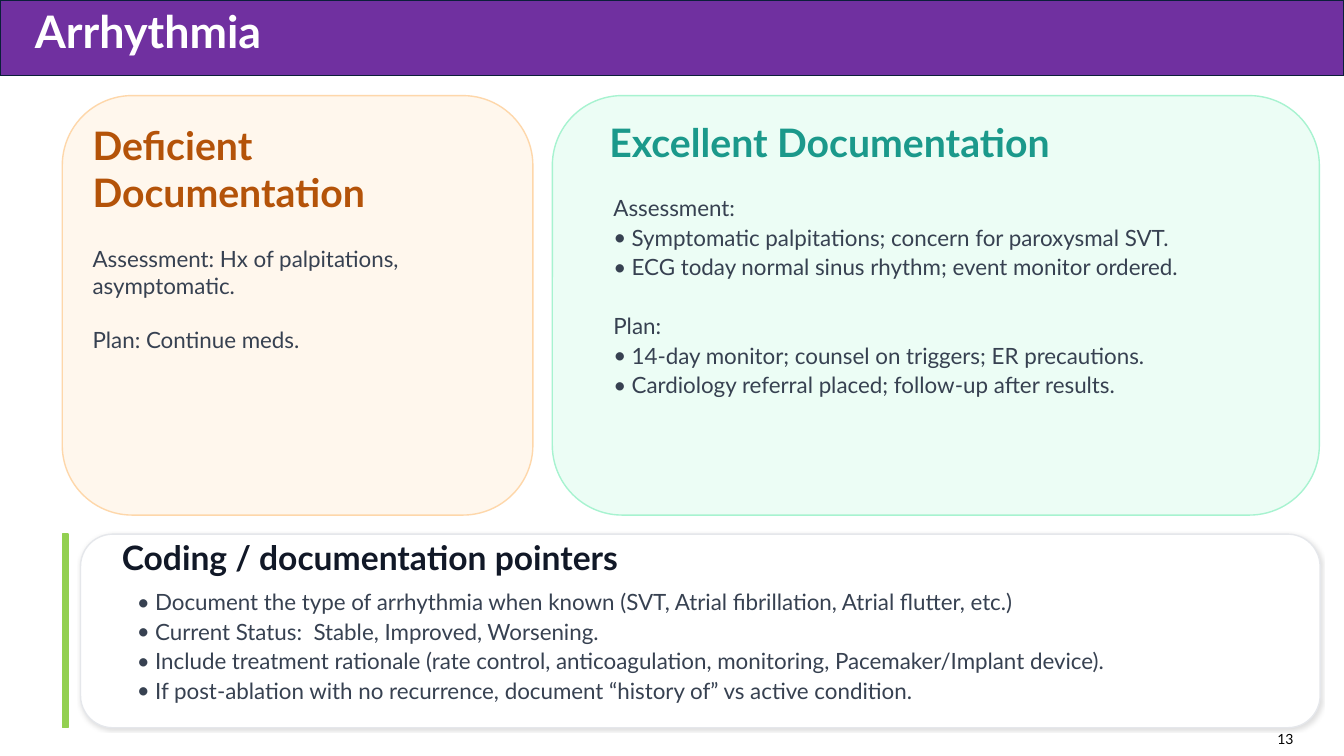
from dataclasses import dataclass

from lxml import etree
from pptx import Presentation
from pptx.dml.color import RGBColor
from pptx.enum.shapes import MSO_SHAPE
from pptx.enum.text import MSO_ANCHOR, PP_ALIGN
from pptx.oxml.ns import qn
from pptx.util import Cm, Pt

RECT, ROUNDED = MSO_SHAPE.RECTANGLE, MSO_SHAPE.ROUNDED_RECTANGLE
TOP, MIDDLE = MSO_ANCHOR.TOP, MSO_ANCHOR.MIDDLE
LEFT, RIGHT = PP_ALIGN.LEFT, PP_ALIGN.RIGHT


@dataclass(frozen=True)
class Style:
    size: float
    color: str
    bold: bool = False


@dataclass(frozen=True)
class Theme:
    font: str = "Lato"
    title: Style = Style(32, "FFFFFF", True)
    deficient: Style = Style(28, "B45309", True)
    excellent: Style = Style(28, "1B998B", True)
    pointers: Style = Style(24, "111827", True)
    body: Style = Style(16, "374151")
    number: Style = Style(10, "000000")
    # Each pair is fill, outline
    banner: tuple = ("7030A0", "0B1F3A")
    deficient_card: tuple = ("FFF7ED", "FED7AA")
    excellent_card: tuple = ("ECFDF5", "A7F3D0")
    pointers_card: tuple = ("FFFFFF", "E5E7EB")
    accent: tuple = ("92D050", "92D050")


@dataclass(frozen=True)
class Box:
    """A rectangle in centimetres."""
    left: float
    top: float
    width: float
    height: float

    def inner(self, left, top, width, height):
        return Box(self.left + left, self.top + top, width, height)

    def lengths(self):
        return [Cm(side) for side in (self.left, self.top, self.width, self.height)]


@dataclass(frozen=True)
class Line:
    text: str
    style: Style
    bullet: bool = False
    gap: float = 0  # points before the paragraph


THEME = Theme()


def add_panel(page, kind, box, colors):
    panel = page.shapes.add_shape(kind, *box.lengths())
    panel.shadow.inherit = False
    fill, outline = colors
    panel.fill.solid()
    panel.fill.fore_color.rgb = RGBColor.from_string(fill)
    panel.line.color.rgb = RGBColor.from_string(outline)
    panel.line.width = Pt(1)
    return panel


def add_soft_shadow(panel):
    effects = panel._element.spPr.find(qn("a:effectLst"))
    shadow = etree.SubElement(effects, qn("a:outerShdw"), blurRad=str(Pt(2)),
                              dist=str(Pt(1)), dir=str(45 * 60000), rotWithShape="0")
    color = etree.SubElement(shadow, qn("a:srgbClr"), val="000000")
    etree.SubElement(color, qn("a:alpha"), val="12000")


def add_bullet(para):
    properties = para._p.get_or_add_pPr()
    properties.set("marL", str(Cm(0.46)))
    properties.set("indent", str(Cm(-0.46)))
    etree.SubElement(properties, qn("a:buFont"), typeface=THEME.font)
    etree.SubElement(properties, qn("a:buChar"), char="•")


def write(frame, lines, anchor=TOP, align=LEFT, spacing=None):
    frame.word_wrap = True
    frame.vertical_anchor = anchor
    frame.text = "\n".join(line.text for line in lines)
    for para, line in zip(frame.paragraphs, lines):
        if line.bullet:
            add_bullet(para)
        para.alignment = align
        if spacing:
            para.line_spacing = spacing
        if line.gap:
            para.space_before = Pt(line.gap)
        for span in para.runs:
            span.font.name = THEME.font
            span.font.size = Pt(line.style.size)
            span.font.bold = line.style.bold
            span.font.color.rgb = RGBColor.from_string(line.style.color)


def add_text(page, box, lines, **layout):
    write(page.shapes.add_textbox(*box.lengths()).text_frame, lines, **layout)


# Title band across the top
def add_banner(page, box, title):
    add_panel(page, RECT, box, THEME.banner)
    add_text(page, box.inner(0.63, 0.36, 30.8, 0.81),
             [Line(title, THEME.title)], anchor=MIDDLE)


# Left card: heading and notes share the card's own text
def add_deficient_card(page, box, heading, assessment, plan):
    card = add_panel(page, ROUNDED, box, THEME.deficient_card)
    write(card.text_frame, [
        Line(heading, THEME.deficient),
        Line(assessment, THEME.body, gap=21.6),
        Line(plan, THEME.body, gap=19.2),
    ])


# Right card: heading above labelled bullet groups
def add_excellent_card(page, box, heading, groups):
    add_panel(page, ROUNDED, box, THEME.excellent_card)
    add_text(page, box.inner(1.19, 0.64, 12.14, 1.07),
             [Line(heading, THEME.excellent)], anchor=MIDDLE)
    lines = []
    for label, items in groups.items():
        lines.append(Line(label, THEME.body, gap=21.1 if lines else 0))
        lines += [Line(item, THEME.body, bullet=True) for item in items]
    add_text(page, box.inner(1.29, 2.29, 16.61, 5.59), lines, spacing=1.1)


# Bottom region: accent bar beside a card of pointers
def add_pointers(page, box, heading, items):
    card_box = box.inner(0.46, 0, box.width - 0.46, box.height)
    add_soft_shadow(add_panel(page, ROUNDED, card_box, THEME.pointers_card))
    add_panel(page, RECT, box.inner(0, 0, 0.15, box.height), THEME.accent)
    add_text(page, card_box.inner(0.79, 0.23, 29, 0.71),
             [Line(heading, THEME.pointers)], anchor=MIDDLE)
    add_text(page, card_box.inner(1.17, 1.17, 26.21, 3.25),
             [Line(item, THEME.body, bullet=True) for item in items], spacing=1.1)


def add_page_number(page, box, number):
    add_text(page, box, [Line(number, THEME.number)], anchor=MIDDLE, align=RIGHT)


def main():
    deck = Presentation()
    deck.slide_width, deck.slide_height = Cm(33.87), Cm(19.05)
    page = deck.slides.add_slide(deck.slide_layouts[6])

    add_banner(page, Box(0, 0, 33.87, 1.9), "Arrhythmia")
    add_deficient_card(
        page, Box(1.57, 2.41, 11.86, 10.57), "Deficient Documentation",
        "Assessment: Hx of palpitations, asymptomatic.", "Plan: Continue meds.")
    add_excellent_card(page, Box(13.92, 2.41, 19.33, 10.57), "Excellent Documentation", {
        "Assessment:": [
            "Symptomatic palpitations; concern for paroxysmal SVT.",
            "ECG today normal sinus rhythm; event monitor ordered.",
        ],
        "Plan:": [
            "14‑day monitor; counsel on triggers; ER precautions.",
            "Cardiology referral placed; follow-up after results.",
        ],
    })
    add_pointers(page, Box(1.57, 13.46, 31.7, 4.88), "Coding / documentation pointers", [
        "Document the type of arrhythmia when known (SVT, Atrial fibrillation, Atrial flutter, etc.)",
        "Current Status:  Stable, Improved, Worsening.",
        "Include treatment rationale (rate control, anticoagulation, monitoring, "
        "Pacemaker/Implant device).",
        "If post-ablation with no recurrence, document “history of” vs active condition.",
    ])
    add_page_number(page, Box(31.83, 18.34, 1.02, 0.56), "13")
    deck.save("out.pptx")


if __name__ == "__main__":
    main()
